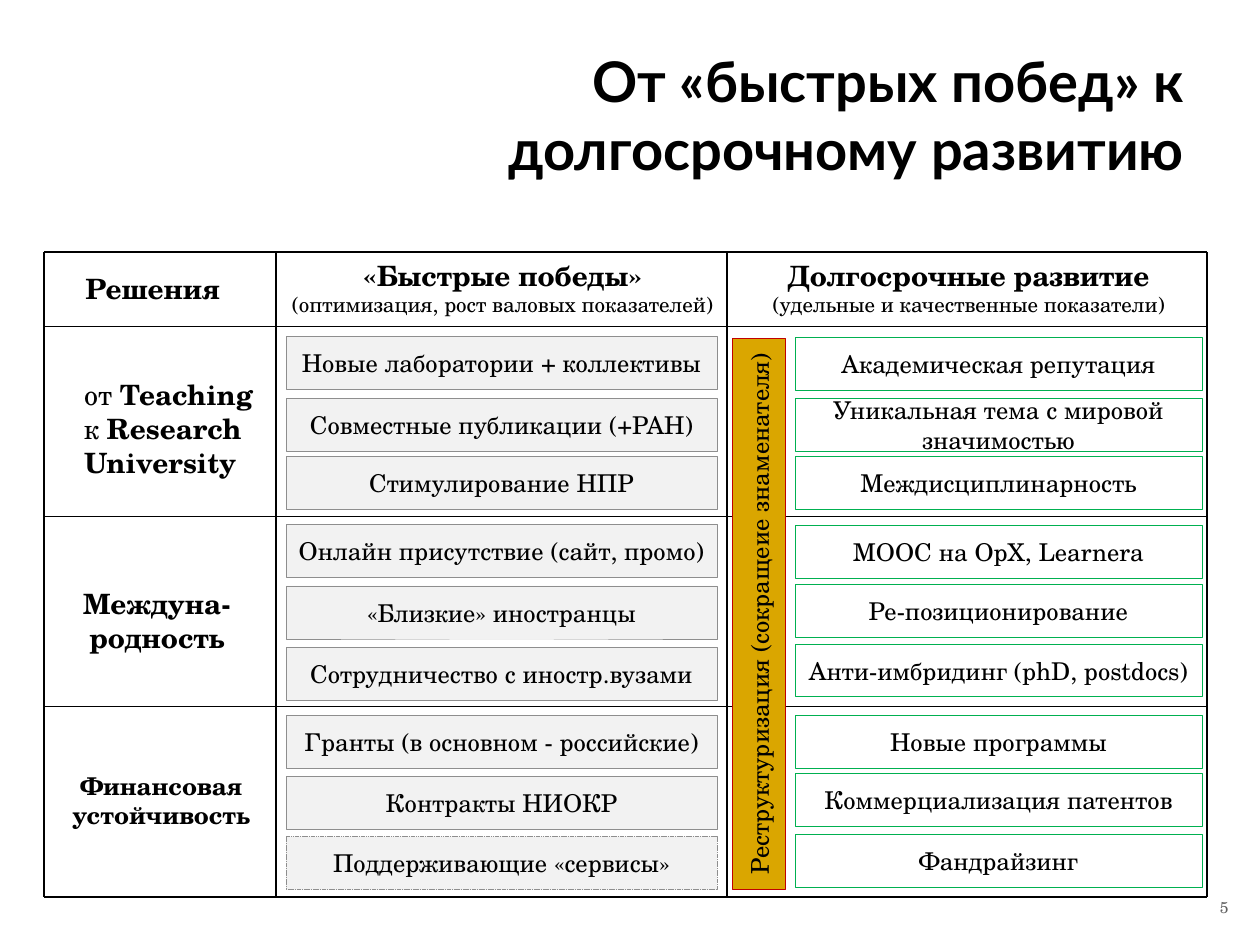
from dataclasses import dataclass

from lxml.etree import SubElement
from pptx import Presentation
from pptx.dml.color import RGBColor
from pptx.enum.dml import MSO_LINE
from pptx.enum.shapes import MSO_CONNECTOR, MSO_SHAPE
from pptx.enum.text import MSO_ANCHOR, MSO_AUTO_SIZE, PP_ALIGN
from pptx.oxml.ns import qn
from pptx.util import Inches, Pt


@dataclass(frozen=True)
class Theme:
    title_font: str = "Lato"
    body_font: str = "TeX Gyre Schola"
    black: str = "000000"
    page_gray: str = "606060"
    quick_fill: str = "F2F2F2"
    quick_line: str = "8E8E8E"
    long_line: str = "00B050"
    bar_fill: str = "DAA600"
    bar_line: str = "C00000"
    title_size: float = 32
    heading_size: float = 16
    box_size: float = 14
    note_size: float = 12
    page_size: float = 9
    grid_width: float = 0.75
    box_line_width: float = 0.25


THEME = Theme()

COLUMN_EDGES = [0.35, 2.19, 5.77, 9.58]
ROW_EDGES = [2, 2.59, 4.1, 5.61, 7.12]
BOX_HEIGHT = 0.42
QUICK_LEFT, QUICK_WIDTH = 2.27, 3.42
LONG_LEFT, LONG_WIDTH = 6.31, 3.23

# One list per table row: (top, text) of each box.
QUICK_WINS = [
    [(2.67, "Новые лаборатории + коллективы"),
     (3.16, "Совместные публикации (+РАН)"),
     (3.62, "Стимулирование НПР")],
    [(4.16, "Онлайн присутствие (сайт, промо)"),
     (4.65, "«Близкие» иностранцы"),
     (5.14, "Сотрудничество с иностр.вузами")],
    [(5.68, "Гранты (в основном - российские)"),
     (6.16, "Контракты НИОКР"),
     (6.64, "Поддерживающие «сервисы»")],
]
LONG_TERM = [
    [(2.68, "Академическая репутация"),
     (3.16, "Уникальная тема с мировой значимостью"),
     (3.62, "Междисциплинарность")],
    [(4.17, "MOOC на OpX, Learnera"),
     (4.64, "Ре-позиционирование"),
     (5.11, "Анти-имбридинг (phD, postdocs)")],
    [(5.68, "Новые программы"),
     (6.14, "Коммерциализация патентов"),
     (6.62, "Фандрайзинг")],
]


def rgb(color):
    return RGBColor.from_string(color)


def write(paragraph, text, *, size=THEME.heading_size, bold=False,
          align=PP_ALIGN.LEFT, color=THEME.black, font=THEME.body_font):
    """Append one formatted run to the paragraph."""
    paragraph.alignment = align
    run = paragraph.add_run()
    run.text = text
    run.font.name = font
    run.font.size = Pt(size)
    run.font.bold = bold
    run.font.color.rgb = rgb(color)


def add_title(slide, text):
    title = slide.shapes.title
    title.left, title.top = Inches(2.48), Inches(0.43)
    title.width, title.height = Inches(7.02), Inches(0.95)
    frame = title.text_frame
    frame.auto_size = MSO_AUTO_SIZE.NONE
    frame.vertical_anchor = MSO_ANCHOR.MIDDLE
    write(frame.paragraphs[0], text, size=THEME.title_size, bold=True,
          align=PP_ALIGN.RIGHT, font=THEME.title_font)


def add_text(slide, left, top, width, height, paragraphs, **text_format):
    """Add a text box; each paragraph is a list of (text, format) runs."""
    box = slide.shapes.add_textbox(
        Inches(left), Inches(top), Inches(width), Inches(height))
    frame = box.text_frame
    frame.word_wrap = True
    for index, runs in enumerate(paragraphs):
        paragraph = frame.add_paragraph() if index else frame.paragraphs[0]
        for text, run_format in runs:
            write(paragraph, text, **{**text_format, **run_format})


def add_grid_line(slide, x1, y1, x2, y2):
    line = slide.shapes.add_connector(
        MSO_CONNECTOR.STRAIGHT, Inches(x1), Inches(y1), Inches(x2), Inches(y2))
    line.line.color.rgb = rgb(THEME.black)
    line.line.width = Pt(THEME.grid_width)
    SubElement(line._element.spPr, qn("a:effectLst"))


def add_grid(slide):
    for y in ROW_EDGES:
        add_grid_line(slide, COLUMN_EDGES[0], y, COLUMN_EDGES[-1], y)
    for x in COLUMN_EDGES:
        add_grid_line(slide, x, ROW_EDGES[0], x, ROW_EDGES[-1])


def add_box(shapes, left, top, width, text, line_color, fill=None):
    box = shapes.add_shape(MSO_SHAPE.RECTANGLE, Inches(left), Inches(top),
                           Inches(width), Inches(BOX_HEIGHT))
    box.shadow.inherit = False
    if fill:
        box.fill.solid()
        box.fill.fore_color.rgb = rgb(fill)
    else:
        box.fill.background()
    box.line.color.rgb = rgb(line_color)
    box.line.width = Pt(THEME.box_line_width)
    frame = box.text_frame
    frame.word_wrap = True
    frame.vertical_anchor = MSO_ANCHOR.MIDDLE
    frame.margin_left = frame.margin_right = Inches(0.05)
    write(frame.paragraphs[0], text, size=THEME.box_size,
          align=PP_ALIGN.CENTER)
    return box


def add_box_column(slide, left, width, rows, line_color, fill=None):
    """Add one group of boxes per table row and return the last box."""
    for row in rows:
        group = slide.shapes.add_group_shape()
        for top, text in row:
            box = add_box(group.shapes, left, top, width, text,
                          line_color, fill)
    return box


def add_column_heading(slide, left, heading, note):
    add_text(slide, left, 2, 3.62, 0.57,
             [[(heading, {"bold": True})],
              [(note, {"size": THEME.note_size})]],
             align=PP_ALIGN.CENTER)


def add_headings(slide):
    bold = {"bold": True}
    add_text(slide, 0.58, 2.11, 1.75, 0.37, [[("Решения", bold)]])
    add_column_heading(slide, 2.18, "«Быстрые победы»",
                       "(оптимизация, рост валовых показателей)")
    add_column_heading(slide, 5.88, "Долгосрочные развитие",
                       "(удельные и качественные показатели)")
    add_text(slide, 0.57, 2.95, 1.69, 0.91,
             [[("от ", {}), ("Teaching ", bold),
               ("к ", {}), ("Research", bold)],
              [("University", bold)]])
    add_text(slide, 0.4, 4.61, 1.69, 0.64,
             [[("Междуна-родность", bold)]], align=PP_ALIGN.CENTER)
    add_text(slide, 0.32, 6.07, 1.92, 0.57,
             [[("Финансовая устойчивость", bold)]],
             size=THEME.box_size, align=PP_ALIGN.CENTER)


def main():
    presentation = Presentation()
    presentation.slide_width = Inches(10)
    presentation.slide_height = Inches(7.5)
    slide = presentation.slides.add_slide(presentation.slide_layouts[5])

    add_title(slide, "От «быстрых побед» к долгосрочному развитию")
    add_text(slide, 7.52, 7.08, 2.33, 0.27, [[("5", {})]],
             size=THEME.page_size, color=THEME.page_gray,
             align=PP_ALIGN.RIGHT)
    add_grid(slide)
    add_headings(slide)

    services = add_box_column(slide, QUICK_LEFT, QUICK_WIDTH, QUICK_WINS,
                              THEME.quick_line, THEME.quick_fill)
    services.line.dash_style = MSO_LINE.SQUARE_DOT
    restructuring = add_box(slide.shapes, 3.84, 4.66, 4.37,
                            "Реструктуризация (сокращеие знаменателя)",
                            THEME.bar_line, THEME.bar_fill)
    restructuring.rotation = 270
    add_box_column(slide, LONG_LEFT, LONG_WIDTH, LONG_TERM, THEME.long_line)

    presentation.save("out.pptx")


if __name__ == "__main__":
    main()
